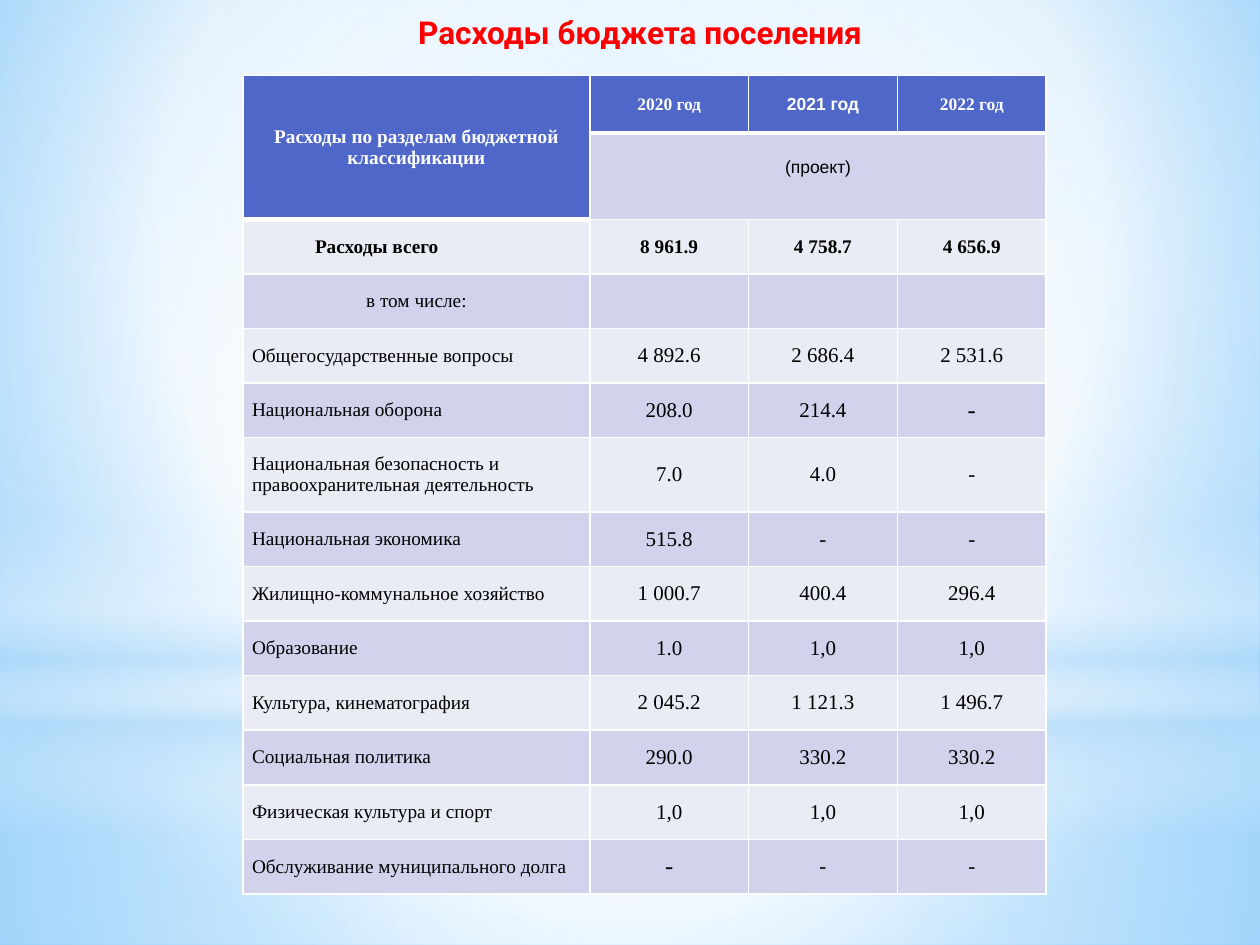
"""Build a slide with a table of settlement budget expenditure by section."""
from pptx import Presentation
from pptx.dml.color import RGBColor
from pptx.enum.shapes import MSO_SHAPE
from pptx.enum.text import MSO_ANCHOR, PP_ALIGN
from pptx.oxml import parse_xml
from pptx.oxml.ns import nsdecls, qn
from pptx.util import Cm, Pt

THEME = {
    "red": "FF0000", "white": "FFFFFF", "black": "000000", "blue": "B4DCFA",
    "header": "4E67C8", "bands": ("E9EBF5", "D0D3EB"),
    "sky": [(0, "9ED5FF", 100), (60, "FFFFFF", 100), (100, "5BB9FF", 100)],
    "title_size": 18, "head_size": 10, "label_size": 11, "value_size": 12, "dash_size": 14,
    "title_font": "Roboto", "serif": "Times New Roman", "sans": "Arial",
}
WHITE, BLUE = THEME["white"], THEME["blue"]
CENTRE = '<a:path path="circle"><a:fillToRect l="50000" t="50000" r="50000" b="50000"/></a:path>'
SKY_FOCUS = '<a:path path="circle"><a:fillToRect l="20000" t="10000" r="20000" b="60000"/></a:path>'
DOWN = '<a:lin ang="5400000" scaled="0"/>'


def paint(props, stops, shade):
    """Swap the solid fill in props for a gradient of (position, colour, opacity) stops."""
    gs = "".join(
        f'<a:gs pos="{pos * 1000}"><a:srgbClr val="{color}"><a:alpha val="{alpha * 1000}"/></a:srgbClr></a:gs>'
        for pos, color, alpha in stops
    )
    grad = parse_xml(f'<a:gradFill {nsdecls("a")} rotWithShape="1"><a:gsLst>{gs}</a:gsLst>{shade}</a:gradFill>')
    props.replace(props.find(qn("a:solidFill")), grad)


def write(tf, text, color, align=PP_ALIGN.CENTER, **font):
    """Put one formatted run into a text frame."""
    p = tf.paragraphs[0]
    p.alignment = align
    r = p.add_run()
    r.text = text
    for name, value in font.items():
        setattr(r.font, name, value)
    r.font.color.rgb = RGBColor.from_string(color)


prs = Presentation()
prs.slide_width, prs.slide_height = Cm(25.4), Cm(19.05)
s = prs.slides.add_slide(prs.slide_layouts[5])
s.background.fill.solid()
paint(s._element.find(".//" + qn("p:bgPr")), THEME["sky"], SKY_FOCUS)

GLOWS = [
    (MSO_SHAPE.RECTANGLE, 14.17, 4.88, CENTRE, [(0, WHITE, 91), (37, WHITE, 76), (100, BLUE, 79)]),
    (MSO_SHAPE.RECTANGLE, 0, 14.17, CENTRE, [(0, WHITE, 89), (48, WHITE, 62), (100, BLUE, 79)]),
    (MSO_SHAPE.RECTANGLE, 10.46, 6.35, DOWN,
     [(0, WHITE, 0), (29, WHITE, 30), (45, BLUE, 40), (55, WHITE, 26), (65, BLUE, 60), (100, WHITE, 0)]),
    (MSO_SHAPE.OVAL, 4.45, 14.17, CENTRE, [(0, WHITE, 100), (56, WHITE, 0)]),
]
for kind, top, height, shade, stops in GLOWS:
    sp = s.shapes.add_shape(kind, 0, Cm(top), prs.slide_width, Cm(height))
    sp.shadow.inherit = False
    sp.line.fill.background()
    sp.fill.solid()
    paint(sp._element.spPr, stops, shade)

title = s.shapes.title
s.shapes._spTree.append(title._element)
for name, value in {"left": 0.84, "top": 0.13, "width": 24.13, "height": 1.4}.items():
    setattr(title, name, Cm(value))
title.text_frame.vertical_anchor = MSO_ANCHOR.TOP
write(title.text_frame, "Расходы бюджета поселения", THEME["red"],
      size=Pt(THEME["title_size"]), name=THEME["title_font"], bold=True)

ROWS = [
    ("Расходы по разделам бюджетной классификации", "2020 год", "2021 год", "2022 год"),
    ("", "(проект)", "", ""),
    ("Расходы всего", "8 961.9", "4 758.7", "4 656.9"),
    ("в том числе:", "", "", ""),
    ("Общегосударственные вопросы", "4 892.6", "2 686.4", "2 531.6"),
    ("Национальная оборона", "208.0", "214.4", "-"),
    ("Национальная безопасность и правоохранительная деятельность", "7.0", "4.0", "-"),
    ("Национальная экономика", "515.8", "-", "-"),
    ("Жилищно-коммунальное хозяйство", "1 000.7", "400.4", "296.4"),
    ("Образование", "1.0", "1,0", "1,0"),
    ("Культура, кинематография", "2 045.2", "1 121.3", "1 496.7"),
    ("Социальная политика", "290.0", "330.2", "330.2"),
    ("Физическая культура и спорт", "1,0", "1,0", "1,0"),
    ("Обслуживание муниципального долга", "-", "-", "-"),
]
COLS = [6.99, 3.2, 3, 3]
TALL = {0: 1.16, 1: 1.74, 6: 1.5}
HEADERS = {(0, 0), (0, 1), (0, 2), (0, 3), (1, 0)}
SANS = {(0, 2), (1, 1)}
BIG_DASHES = {(5, 3), (13, 1)}
CELL = {"margin_left": Cm(0.18), "margin_right": Cm(0.18), "margin_top": 0, "margin_bottom": 0,
        "vertical_anchor": MSO_ANCHOR.MIDDLE}
heights = [TALL.get(row, 1.1) for row in range(len(ROWS))]

tbl = s.shapes.add_table(len(ROWS), len(COLS), Cm(4.9), Cm(1.52), Cm(sum(COLS)), Cm(sum(heights))).table
for column, width in zip(tbl.columns, COLS):
    column.width = Cm(width)
for line, height in zip(tbl.rows, heights):
    line.height = Cm(height)
tbl.cell(0, 0).merge(tbl.cell(1, 0))
tbl.cell(1, 1).merge(tbl.cell(1, 3))

for row, texts in enumerate(ROWS):
    for col, text in enumerate(texts):
        cell = tbl.cell(row, col)
        header = (row, col) in HEADERS
        for name, value in CELL.items():
            setattr(cell, name, value)
        borders = {"lnL": 1, "lnR": 1, "lnT": 3 if (row - 1, col) in HEADERS else 1, "lnB": 3 if header else 1}
        for side, width in borders.items():
            cell._tc.get_or_add_tcPr().append(parse_xml(
                f'<a:{side} {nsdecls("a")} w="{Pt(width)}"><a:solidFill><a:srgbClr val="{WHITE}"/>'
                f'</a:solidFill></a:{side}>'))
        cell.fill.solid()
        cell.fill.fore_color.rgb = RGBColor.from_string(THEME["header"] if header else THEME["bands"][row % 2])
        if not text:
            continue
        if (row, col) in BIG_DASHES:
            size = THEME["dash_size"]
        elif row < 2 and col:
            size = THEME["head_size"]
        else:
            size = THEME["label_size"] if col == 0 or row == 2 else THEME["value_size"]
        left = col == 0 and row not in (0, 3)
        write(cell.text_frame, text, WHITE if header else THEME["black"],
              PP_ALIGN.LEFT if left else PP_ALIGN.CENTER, size=Pt(size),
              name=THEME["sans"] if (row, col) in SANS else THEME["serif"], bold=header or row == 2)

tbl.cell(2, 0).margin_left = Cm(1.45)
tbl.cell(1, 1).margin_bottom = Cm(0.36)
prs.save("out.pptx")
